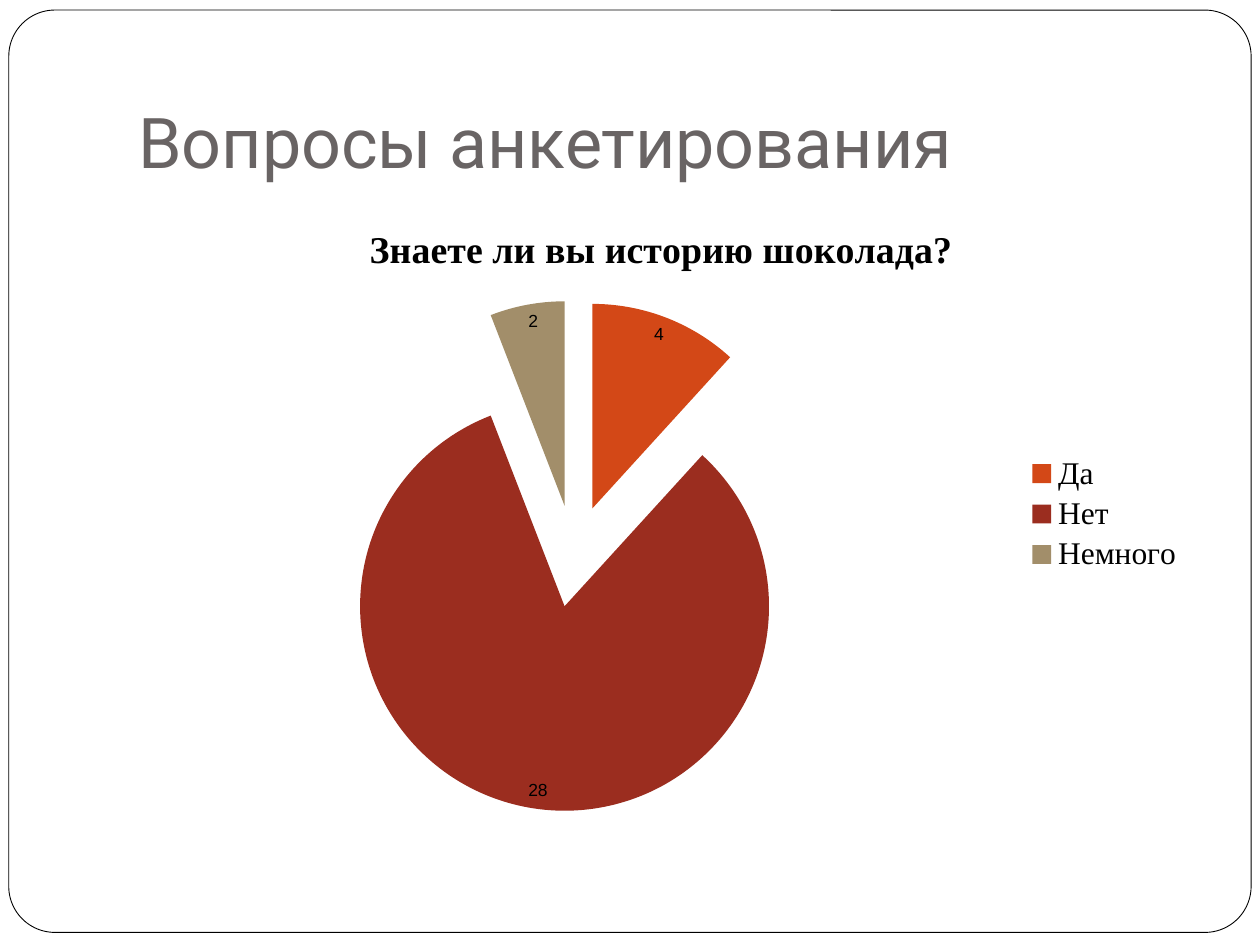
from dataclasses import dataclass

from pptx import Presentation
from pptx.chart.data import CategoryChartData
from pptx.dml.color import RGBColor
from pptx.enum.chart import XL_CHART_TYPE, XL_LABEL_POSITION, XL_LEGEND_POSITION
from pptx.enum.shapes import MSO_SHAPE
from pptx.enum.text import MSO_ANCHOR
from pptx.oxml import parse_xml
from pptx.oxml.ns import nsdecls
from pptx.util import Inches, Pt

COLORS = {
    "paper": "FFFFFF",
    "ink": "000000",
    "heading": "696464",
    "orange": "D34817",
    "red": "9B2D1F",
    "sand": "A28E6A",
}
HEADING_FONT, CHART_FONT, LABEL_FONT = "Roboto", "Times New Roman", "Arial"
QUESTION = "Знаете ли вы историю шоколада?"
EXPLOSION = 25


@dataclass
class Area:
    left: float
    top: float
    width: float
    height: float

    def inches(self) -> tuple:
        return tuple(Inches(n) for n in (self.left, self.top, self.width, self.height))


@dataclass
class Answer:
    name: str
    count: int
    color: str


ANSWERS = [
    Answer("Да", 4, "orange"),
    Answer("Нет", 28, "red"),
    Answer("Немного", 2, "sand"),
]


def rgb(name: str) -> RGBColor:
    return RGBColor.from_string(COLORS[name])


def style_font(font, name: str, size: float, color: str, bold: bool = False) -> None:
    font.name, font.size, font.bold = name, Pt(size), bold
    font.color.rgb = rgb(color)


def draw_frame(page, area: Area) -> None:
    frame = page.shapes.add_shape(MSO_SHAPE.ROUNDED_RECTANGLE, *area.inches())
    frame.adjustments[0] = 0.05
    frame.shadow.inherit = False
    frame.fill.solid()
    frame.fill.fore_color.rgb = rgb("paper")
    frame.line.color.rgb = rgb("ink")
    frame.line.width = Pt(0.5)


def draw_heading(page, area: Area, text: str) -> None:
    box = page.shapes.add_textbox(*area.inches())
    frame = box.text_frame
    frame.word_wrap = True
    frame.vertical_anchor = MSO_ANCHOR.BOTTOM
    frame.margin_bottom = Inches(0.1)
    span = frame.paragraphs[0].add_run()
    span.text = text
    style_font(span.font, HEADING_FONT, 40, "heading")


def draw_pie(page, area: Area, answers: list[Answer]) -> None:
    data = CategoryChartData()
    data.categories = [answer.name for answer in answers]
    data.add_series(QUESTION, [answer.count for answer in answers])
    chart = page.shapes.add_chart(XL_CHART_TYPE.PIE, *area.inches(), data).chart
    style_font(chart.font, CHART_FONT, 18, "ink")

    # Question above the pie
    chart.has_title = True
    span = chart.chart_title.text_frame.paragraphs[0].add_run()
    span.text = QUESTION
    style_font(span.font, CHART_FONT, 21.6, "ink", bold=True)

    # Legend on the right
    chart.has_legend = True
    chart.legend.position = XL_LEGEND_POSITION.RIGHT
    chart.legend.include_in_layout = False
    style_font(chart.legend.font, CHART_FONT, 18, "ink")

    # Separated slices with their counts
    plot = chart.plots[0]
    plot.vary_by_categories = True
    series = plot.series[0]
    for index, answer in enumerate(answers):
        point = series.points[index]
        point.format.fill.solid()
        point.format.fill.fore_color.rgb = rgb(answer.color)
        label = point.data_label
        style_font(label.font, LABEL_FONT, 10, "ink")
        label.position = XL_LABEL_POSITION.INSIDE_END
    first_point = series._element.dPt_lst[0]
    first_point.addprevious(
        parse_xml(f'<c:explosion {nsdecls("c")} val="{EXPLOSION}"/>')
    )


def main() -> None:
    deck = Presentation()
    deck.slide_width, deck.slide_height = Inches(10), Inches(7.5)
    page = deck.slides.add_slide(deck.slide_layouts[6])
    draw_frame(page, Area(0.07, 0.08, 9.86, 7.32))
    draw_heading(page, Area(1, 0.3, 8.5, 1.25), "Вопросы анкетирования")
    draw_pie(page, Area(1, 1.58, 8.5, 5), ANSWERS)
    deck.save("out.pptx")


if __name__ == "__main__":
    main()
